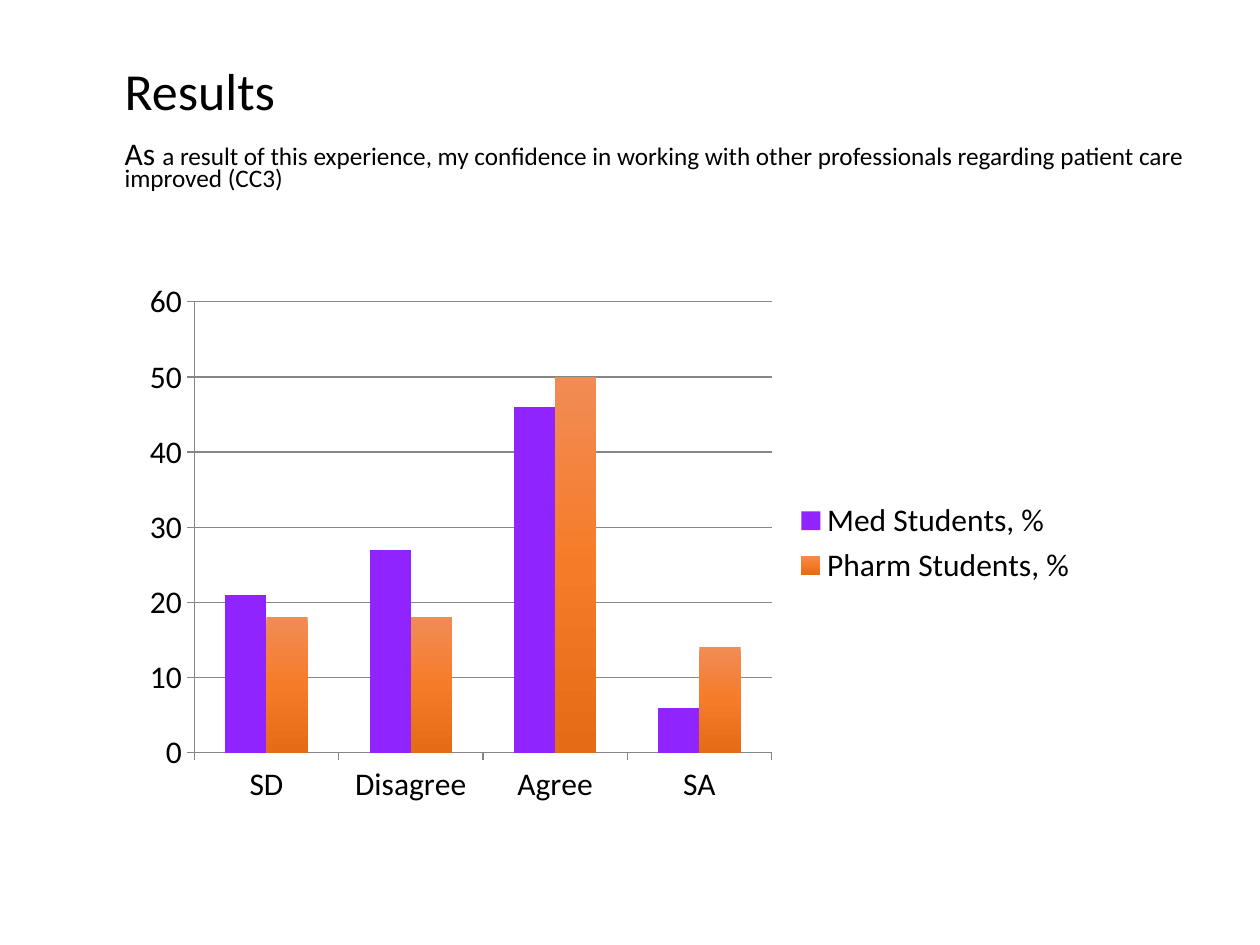
from typing import NamedTuple

from lxml import etree
from pptx import Presentation
from pptx.chart.data import CategoryChartData
from pptx.dml.color import RGBColor
from pptx.enum.chart import XL_CHART_TYPE, XL_LEGEND_POSITION, XL_TICK_MARK
from pptx.enum.text import MSO_ANCHOR, MSO_AUTO_SIZE, PP_ALIGN
from pptx.oxml import parse_xml
from pptx.oxml.ns import nsdecls, qn
from pptx.util import Emu, Pt

COLUMNS = XL_CHART_TYPE.COLUMN_CLUSTERED
RIGHT = XL_LEGEND_POSITION.RIGHT
OUT = XL_TICK_MARK.OUTSIDE
NONE = XL_TICK_MARK.NONE
LEFT = PP_ALIGN.LEFT
TOP = MSO_ANCHOR.TOP
FIXED = MSO_AUTO_SIZE.NONE

FONT = "Calibri"
BLACK = "000000"
GRAY = "868686"


class Box(NamedTuple):
    x: int
    y: int
    w: int
    h: int


class Group(NamedTuple):
    name: str
    vals: tuple[int, ...]
    fill: tuple[str, ...]  # one colour, or gradient stops from top to bottom


TITLE = Box(112, 66, 1099, 178)
CHART = Box(131, 272, 959, 542)
PLOT = Box(194, 302, 577, 451)
ANSWERS = ("SD", "Disagree", "Agree", "SA")
GROUPS = (
    Group("Med Students, %", (21, 27, 46, 6), ("8F24FF",)),
    Group("Pharm Students, %", (18, 18, 50, 14), ("F18C55", "F67B28", "E56B17")),
)


def px(n: int) -> Emu:
    return Emu(round(n * 914400 / 126))


def color(code: str) -> RGBColor:
    return RGBColor.from_string(code)


def style(font, size: float) -> None:
    font.name = FONT
    font.size = Pt(size)
    font.bold = False
    font.color.rgb = color(BLACK)


def write(para, text: str, *, size: float) -> None:
    run = para.add_run()
    run.text = text
    style(run.font, size)


def add_title(slide) -> None:
    title = slide.shapes.title
    title.left, title.top, title.width, title.height = map(px, TITLE)
    frame = title.text_frame
    frame.word_wrap = True
    frame.auto_size = FIXED
    frame.vertical_anchor = TOP
    frame.margin_top = px(10)
    head = frame.paragraphs[0]
    body = frame.add_paragraph()
    for para, gap in ((head, 0), (body, 14)):
        para.alignment = LEFT
        para.line_spacing = 0.7
        para.space_before = Pt(gap)
    write(head, "Results", size=29.7)
    write(body, "As ", size=18)
    write(body, "a result of this experience, my confidence in working with other "
                "professionals regarding patient care improved (CC3)", size=14.4)


def paint(fmt, stops: tuple[str, ...]) -> None:
    if len(stops) == 1:
        fmt.fill.solid()
        fmt.fill.fore_color.rgb = color(stops[0])
        return
    fmt.fill.gradient()
    fmt.fill.gradient_angle = 270
    marks = fmt.fill.gradient_stops[0]
    marks = next(fmt.element.iter(qn("a:gsLst"))) if hasattr(fmt, "element") else None


def shade(series, stops: tuple[str, ...]) -> None:
    """Fill the columns with one colour or an even vertical gradient."""
    fill = series.format.fill
    if len(stops) == 1:
        fill.solid()
        fill.fore_color.rgb = color(stops[0])
        return
    fill.gradient()
    fill.gradient_angle = 270
    marks = next(series._element.iter(qn("a:gsLst")))
    for old in list(marks):
        marks.remove(old)
    for i, code in enumerate(stops):
        stop = etree.SubElement(marks, qn("a:gs"), pos=str(100000 * i // (len(stops) - 1)))
        etree.SubElement(stop, qn("a:srgbClr"), val=code)


def place_plot(chart) -> None:
    """Fix the inner plot area as fractions of the chart frame."""
    spots = {
        "x": (PLOT.x - CHART.x) / CHART.w,
        "y": (PLOT.y - CHART.y) / CHART.h,
        "w": PLOT.w / CHART.w,
        "h": PLOT.h / CHART.h,
    }
    modes = '<c:layoutTarget val="inner"/><c:xMode val="edge"/><c:yMode val="edge"/>'
    sizes = "".join(f'<c:{key} val="{val:.3f}"/>' for key, val in spots.items())
    area = chart._chartSpace.chart.plotArea
    for old in area.findall(qn("c:layout")):
        area.remove(old)
    area.insert(0, parse_xml(
        f'<c:layout {nsdecls("c")}><c:manualLayout>{modes}{sizes}</c:manualLayout></c:layout>'))


def rule(line) -> None:
    line.color.rgb = color(GRAY)
    line.width = Pt(0.75)


def add_chart(slide) -> None:
    data = CategoryChartData(number_format="General")
    data.categories = ANSWERS
    for group in GROUPS:
        data.add_series(group.name, group.vals)
    chart = slide.shapes.add_chart(COLUMNS, *map(px, CHART), data).chart
    style(chart.font, 18)
    chart.has_title = False
    chart.has_legend = True
    chart.legend.position = RIGHT
    chart.legend.include_in_layout = False

    # Columns
    plot = chart.plots[0]
    plot.vary_by_categories = False
    plot.gap_width = 150
    plot.overlap = 0
    for series, group in zip(plot.series, GROUPS):
        shade(series, group.fill)

    # Axes and grid
    for axis in (chart.category_axis, chart.value_axis):
        axis.major_tick_mark = OUT
        axis.minor_tick_mark = NONE
        rule(axis.format.line)
    scale = chart.value_axis
    scale.minimum_scale, scale.maximum_scale, scale.major_unit = 0, 60, 10
    scale.has_major_gridlines = True
    rule(scale.major_gridlines.format.line)
    place_plot(chart)


def main() -> None:
    deck = Presentation()
    deck.slide_width, deck.slide_height = px(1260), px(945)
    slide = deck.slides.add_slide(deck.slide_layouts.get_by_name("Title Only"))
    add_title(slide)
    add_chart(slide)
    deck.save("out.pptx")


if __name__ == "__main__":
    main()
